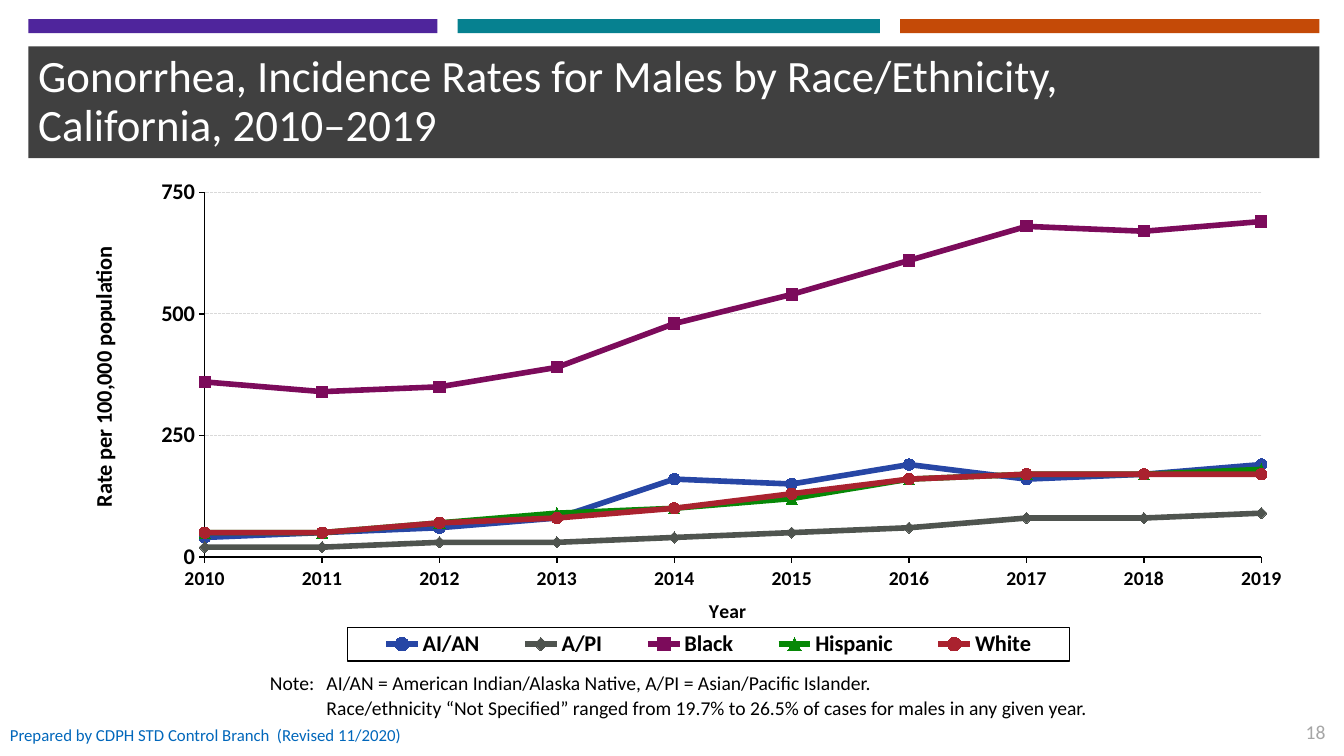
from pptx import Presentation
from pptx.chart.data import CategoryChartData
from pptx.dml.color import RGBColor
from pptx.enum import chart as ch, dml, shapes, text as tx
from pptx.oxml import parse_xml
from pptx.oxml.ns import nsdecls
from pptx.util import Pt

BLACK, WHITE = RGBColor(0, 0, 0), RGBColor(255, 255, 255)
DARK = RGBColor(0x40, 0x40, 0x40)
PURPLE = RGBColor(0x4F, 0x25, 0x9C)
TEAL = RGBColor(0x06, 0x81, 0x90)
ORANGE = RGBColor(0xC4, 0x4A, 0x07)
LINK_BLUE = RGBColor(0x01, 0x67, 0xBB)
PAGE_GREY = RGBColor(0xA6, 0xA6, 0xA6)
GRID_GREY = RGBColor(0xD9, 0xD9, 0xD9)
FONT = "Calibri"

TITLE = "Gonorrhea, Incidence Rates for Males by Race/Ethnicity, \nCalifornia, 2010–2019"
NOTES = [
    "\tNote:\tAI/AN = American Indian/Alaska Native, A/PI = Asian/Pacific Islander.",
    "\t\tRace/ethnicity “Not Specified” ranged from 19.7% to 26.5% of cases "
    "for males in any given year.",
]
PREPARED, REVISED, PAGE = "Prepared by CDPH STD Control Branch", "(Revised 11/2020)", "18"

YEARS = [str(year) for year in range(2010, 2020)]
MARK = ch.XL_MARKER_STYLE
RATES = [  # group, colour, marker, rate per year
    ("AI/AN", RGBColor(0x27, 0x46, 0xA5), MARK.CIRCLE,
     (40, 50, 60, 80, 160, 150, 190, 160, 170, 190)),
    ("A/PI", RGBColor(0x4F, 0x54, 0x4F), MARK.DIAMOND,
     (20, 20, 30, 30, 40, 50, 60, 80, 80, 90)),
    ("Black", RGBColor(0x7C, 0x0B, 0x5B), MARK.SQUARE,
     (360, 340, 350, 390, 480, 540, 610, 680, 670, 690)),
    ("Hispanic", RGBColor(0x07, 0x88, 0x07), MARK.TRIANGLE,
     (50, 50, 70, 90, 100, 120, 160, 170, 170, 180)),
    ("White", RGBColor(0xAA, 0x22, 0x2F), MARK.CIRCLE,
     (50, 50, 70, 80, 100, 130, 160, 170, 170, 170)),
]

# left, top, width, height in points
HEADER = (20.2, 33.1, 922.3, 79.9)
BARS = [
    (HEADER, DARK),
    ((20.2, 13.7, 292.3, 10.1), PURPLE),
    ((326.9, 13.7, 301.7, 10.1), TEAL),
    ((643, 13.7, 299.5, 10.1), ORANGE),
]
CHART_BOX = (32.4, 115.2, 896.4, 364.3)


def style_font(font, size, color, bold=None):
    font.name, font.size, font.bold = FONT, Pt(size), bold
    font.color.rgb = color


def add_text(slide, box, lines, size, color, anchor=tx.MSO_ANCHOR.TOP,
             align=None, wrap=True, spacing=None, after=None, tabs=()):
    frame = slide.shapes.add_textbox(*map(Pt, box)).text_frame
    frame.word_wrap, frame.vertical_anchor = wrap, anchor
    for i, line in enumerate(lines):
        para = frame.add_paragraph() if i else frame.paragraphs[0]
        para.text, para.alignment = line, align
        para.line_spacing = spacing
        if after is not None:
            para.space_after = Pt(after)
        if tabs:
            stops = "".join(f'<a:tab pos="{Pt(pos)}" algn="{side}"/>' for pos, side in tabs)
            para._p.get_or_add_pPr().append(
                parse_xml(f'<a:tabLst {nsdecls("a")}>{stops}</a:tabLst>'))
        for run in para.runs:
            style_font(run.font, size, color)


def place(part, after, x, y, w=None, h=None, inner=False):
    """Fix a chart part at fractions of the chart, its layout following the tag `after`."""
    for old in part.xpath("c:layout"):
        part.remove(old)
    rules = [("layoutTarget", "inner")] if inner else []
    rules += [("xMode", "edge"), ("yMode", "edge"), ("x", x), ("y", y)]
    if w is not None:
        rules += [("w", w), ("h", h)]
    body = "".join(f'<c:{tag} val="{val}"/>' for tag, val in rules)
    layout = parse_xml(f'<c:layout {nsdecls("c")}><c:manualLayout>{body}'
                       '</c:manualLayout></c:layout>')
    if after:
        part.xpath(after)[0].addnext(layout)
    else:
        part.insert(0, layout)


def style_axis(axis, title, title_size, size, x, y):
    style_font(axis.tick_labels.font, size, BLACK, True)
    axis.major_tick_mark = ch.XL_TICK_MARK.OUTSIDE
    axis.minor_tick_mark = ch.XL_TICK_MARK.NONE
    axis.format.line.color.rgb = BLACK
    axis.format.line.width = Pt(1.06)
    para = axis.axis_title.text_frame.paragraphs[0]
    run = para.add_run()
    run.text = title
    style_font(run.font, title_size, BLACK, True)
    place(axis.axis_title._element, "c:tx", x, y)


def add_rates_chart(slide):
    data = CategoryChartData(number_format="#,##0")
    data.categories = YEARS
    for group, _, _, rates in RATES:
        data.add_series(group, rates)
    chart = slide.shapes.add_chart(
        ch.XL_CHART_TYPE.LINE_MARKERS, *map(Pt, CHART_BOX), data).chart
    chart.has_title = False
    style_font(chart.font, 16, BLACK, True)
    chart.plots[0].vary_by_categories = False
    place(chart._chartSpace.chart.plotArea, None, 0.127, 0.061, 0.842, 0.715, inner=True)

    for series, (_, color, marker, _) in zip(chart.plots[0].series, RATES):
        series.smooth = False
        series.format.line.color.rgb = color
        series.format.line.width = Pt(4)
        series.marker.style, series.marker.size = marker, 8
        series.marker.format.fill.solid()
        series.marker.format.fill.fore_color.rgb = color
        series.marker.format.line.fill.background()

    style_axis(chart.category_axis, "Year", 14, 14, 0.526, 0.848)
    rate_axis = chart.value_axis
    style_axis(rate_axis, "Rate per 100,000 population", 16, 16, 0.031, 0.159)
    rate_axis.minimum_scale, rate_axis.maximum_scale, rate_axis.major_unit = 0, 750, 250
    rate_axis.tick_labels.number_format = "#,##0"
    rate_axis.tick_labels.number_format_is_linked = False
    rate_axis.has_major_gridlines = True
    grid = rate_axis.major_gridlines.format.line
    grid.color.rgb, grid.width = GRID_GREY, Pt(0.75)
    grid.dash_style = dml.MSO_LINE.SQUARE_DOT
    # First and last years sit on the plot edges
    value_xml = rate_axis._element
    for old in value_xml.xpath("c:crossBetween"):
        value_xml.remove(old)
    value_xml.xpath("c:crossAx|c:crosses")[-1].addnext(
        parse_xml(f'<c:crossBetween {nsdecls("c")} val="midCat"/>'))

    chart.has_legend = True
    legend = chart.legend
    legend.position = ch.XL_LEGEND_POSITION.BOTTOM
    legend.include_in_layout = False
    style_font(legend.font, 16, BLACK, True)
    place(legend._element, "c:legendPos", 0.241, 0.914, 0.575, 0.066)
    legend._element.xpath("c:txPr")[0].addprevious(parse_xml(
        f'<c:spPr {nsdecls("c", "a")}><a:noFill/><a:ln w="{Pt(1)}"><a:solidFill>'
        f'<a:srgbClr val="{BLACK}"/></a:solidFill></a:ln></c:spPr>'))


def main():
    deck = Presentation()
    deck.slide_width, deck.slide_height = Pt(960), Pt(540)
    slide = deck.slides.add_slide(deck.slide_layouts[6])
    for box, color in BARS:
        bar = slide.shapes.add_shape(shapes.MSO_SHAPE.RECTANGLE, *map(Pt, box))
        bar.shadow.inherit = False
        bar.fill.solid()
        bar.fill.fore_color.rgb = color
        bar.line.fill.background()

    middle = tx.MSO_ANCHOR.MIDDLE
    add_text(slide, HEADER, [TITLE], 32, WHITE, anchor=middle, spacing=0.9)
    add_rates_chart(slide)
    add_text(slide, (167.8, 475.9, 627.1, 42.5), NOTES, 14, BLACK, after=1,
             tabs=[(49.7, "r"), (58.3, "l")])
    add_text(slide, (0, 510.5, 201.6, 28.8), [PREPARED], 12, LINK_BLUE, anchor=middle)
    add_text(slide, (190.8, 510.5, 108, 28.8), [REVISED], 12, LINK_BLUE, anchor=middle)
    add_text(slide, (923, 510.5, 31, 24.5), [PAGE], 14, PAGE_GREY,
             align=tx.PP_ALIGN.RIGHT, wrap=False)
    deck.save("out.pptx")


if __name__ == "__main__":
    main()
